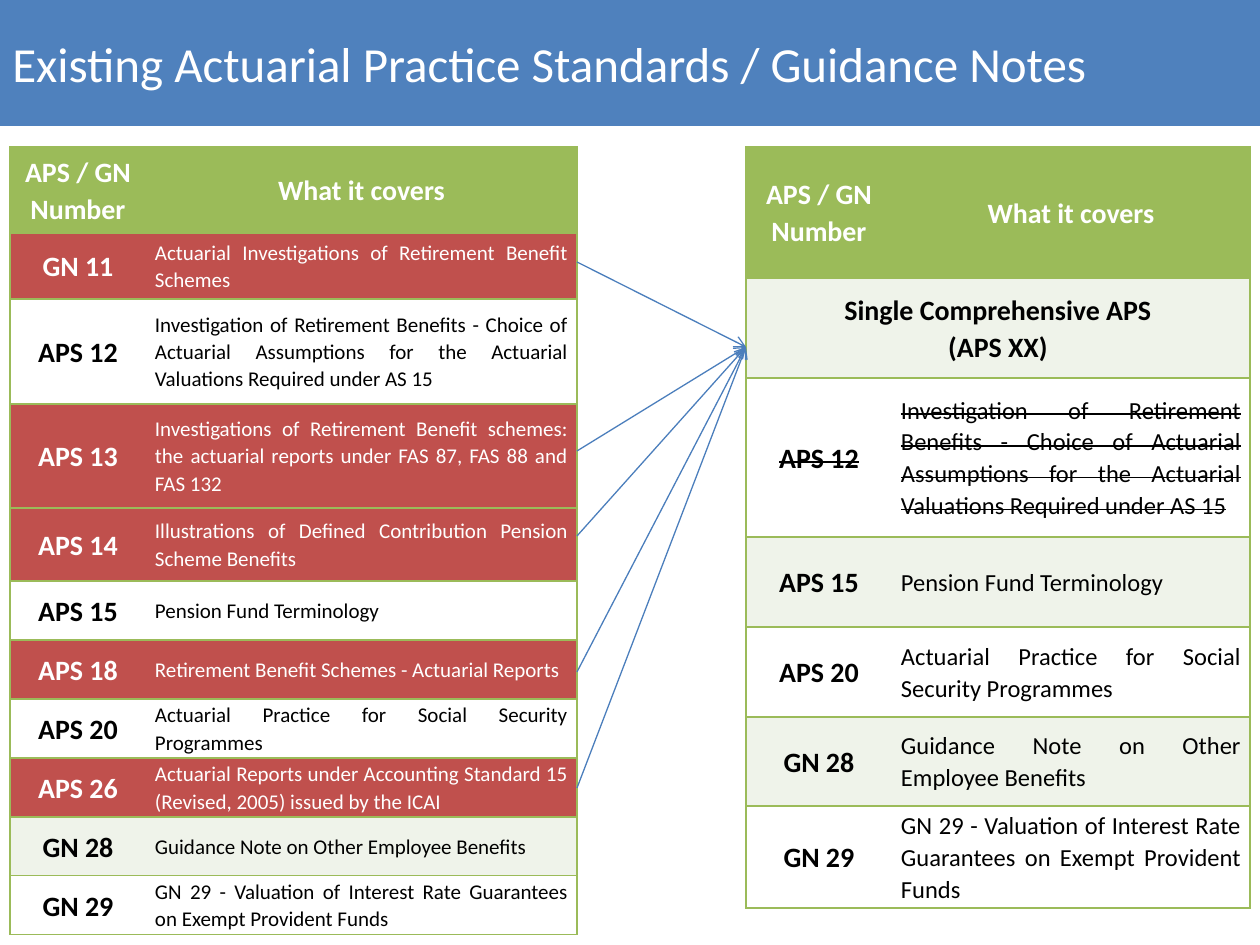
from lxml import etree
from pptx import Presentation
from pptx.dml.color import RGBColor
from pptx.enum.shapes import MSO_CONNECTOR, MSO_SHAPE
from pptx.enum.text import MSO_ANCHOR, PP_ALIGN
from pptx.oxml.ns import qn
from pptx.util import Pt

PX = 914400 / 126
LEFT, CENTER, JUSTIFY = PP_ALIGN.LEFT, PP_ALIGN.CENTER, PP_ALIGN.JUSTIFY
MIDDLE = MSO_ANCHOR.MIDDLE
STRAIGHT = MSO_CONNECTOR.STRAIGHT
COLORS = {
    "banner": "4F81BD", "header": "9BBB59", "merged": "C0504D", "band": "EFF3EA",
    "plain": "FFFFFF", "light": "FFFFFF", "dark": "000000", "arrow": "4B7EBC",
}


def px(length):
    return round(length * PX)


def write(frame, text, size=16, color="dark", bold=True, align=CENTER,
          spacing=1.07, strike=False):
    for index, line in enumerate(text.split("\n")):
        paragraph = frame.add_paragraph() if index else frame.paragraphs[0]
        paragraph.alignment = align
        paragraph.line_spacing = spacing
        run = paragraph.add_run()
        run.text = line
        run.font.name = "Calibri"
        run.font.size = Pt(size)
        run.font.bold = bold
        run.font.color.rgb = RGBColor.from_string(COLORS[color])
        if strike:
            run.font._element.set("strike", "sngStrike")


prs = Presentation()
prs.slide_width, prs.slide_height = px(1260), px(945)
slide = prs.slides.add_slide(prs.slide_layouts[6])
shapes = slide.shapes

banner = shapes.add_shape(MSO_SHAPE.RECTANGLE, 0, 0, px(1260), px(126))
banner.shadow.inherit = False
banner.fill.solid()
banner.fill.fore_color.rgb = RGBColor.from_string(COLORS["banner"])
banner.line.fill.background()
banner.text_frame.word_wrap = True
banner.text_frame.vertical_anchor = MIDDLE
write(banner.text_frame, "Existing Actuarial Practice Standards / Guidance Notes",
      size=28, color="light", bold=False, align=LEFT, spacing=1)

# Each row: height, fill, number, what it covers (None spans both columns)
HEADER = ("header", "APS / GN Number", "What it covers")
APS_12 = ("plain", "APS 12", "Investigation of Retirement Benefits - Choice of Actuarial "
          "Assumptions for the Actuarial Valuations Required under AS 15")
APS_20 = ("plain", "APS 20", "Actuarial Practice for Social Security Programmes")
GN_28 = ("band", "GN 28", "Guidance Note on Other Employee Benefits")
GN_29 = ("plain", "GN 29", "GN 29 - Valuation of Interest Rate Guarantees on Exempt "
         "Provident Funds")
existing = [
    (86, *HEADER),
    (66, "merged", "GN 11", "Actuarial Investigations of Retirement Benefit Schemes"),
    (105, *APS_12),
    (104, "merged", "APS 13", "Investigations of Retirement Benefit schemes: the actuarial "
     "reports under FAS 87, FAS 88 and FAS 132"),
    (73, "merged", "APS 14", "Illustrations of Defined Contribution Pension Scheme Benefits"),
    (59, "plain", "APS 15", "Pension Fund Terminology"),
    (59, "merged", "APS 18", "Retirement Benefit Schemes - Actuarial Reports"),
    (59, *APS_20),
    (59, "merged", "APS 26", "Actuarial Reports under Accounting Standard 15 (Revised, 2005) "
     "issued by the ICAI"),
    (59, *GN_28),
    (59, *GN_29),
]
proposed = [
    (131, *HEADER),
    (100, "band", "Single Comprehensive APS\n(APS XX)", None),
    (159, *APS_12),
    (90, "band", "APS 15", "Pension Fund Terminology"),
    (90, *APS_20),
    (89, *GN_28),
    (102, *GN_29),
]

# Left edge, column widths, size of the descriptions, struck-out number, rows
tables = [
    (10, (136, 431), 12, None, existing),
    (746, (146, 358), 14, "APS 12", proposed),
]
for left, widths, body_size, struck, rows in tables:
    total_height = sum(row[0] for row in rows)
    table = shapes.add_table(len(rows), 2, px(left), px(147), px(sum(widths)),
                             px(total_height)).table
    for column, width in zip(table.columns, widths):
        column.width = px(width)
    for r, (height, fill, number, covers) in enumerate(rows):
        table.rows[r].height = px(height)
        spans = covers is None
        if spans:
            table.cell(r, 0).merge(table.cell(r, 1))
        for c, text in enumerate((number, covers)):
            cell = table.cell(r, c)
            cell.margin_left = cell.margin_right = px(9)
            cell.margin_top = cell.margin_bottom = 0
            cell.vertical_anchor = MIDDLE
            cell.fill.solid()
            cell.fill.fore_color.rgb = RGBColor.from_string(COLORS[fill])
            properties = cell._tc.get_or_add_tcPr()
            inner_side = None if spans else ("R", "L")[c]
            for position, side in enumerate("LRTB"):
                border = etree.Element(qn(f"a:ln{side}"), w=str(Pt(1)))
                if side == inner_side:
                    etree.SubElement(border, qn("a:noFill"))
                else:
                    solid = etree.SubElement(border, qn("a:solidFill"))
                    etree.SubElement(solid, qn("a:srgbClr"), val=COLORS["header"])
                properties.insert(position, border)
            if text is None:
                continue
            is_body = c == 1 and r > 0
            write(cell.text_frame, text,
                  size=body_size if is_body else 16,
                  color="light" if fill in ("header", "merged") else "dark",
                  bold=not is_body,
                  align=JUSTIFY if is_body else CENTER,
                  strike=number == struck)

# Standards that move into the single comprehensive one
for start_y in (788, 672, 262, 451, 536):
    arrow = shapes.add_connector(STRAIGHT, px(577), px(start_y), px(746), px(347))
    arrow.line.color.rgb = RGBColor.from_string(COLORS["arrow"])
    arrow.line.width = Pt(0.75)
    etree.SubElement(arrow.line._get_or_add_ln(), qn("a:tailEnd"), type="arrow")
    etree.SubElement(arrow._element.spPr, qn("a:effectLst"))

prs.save("out.pptx")
